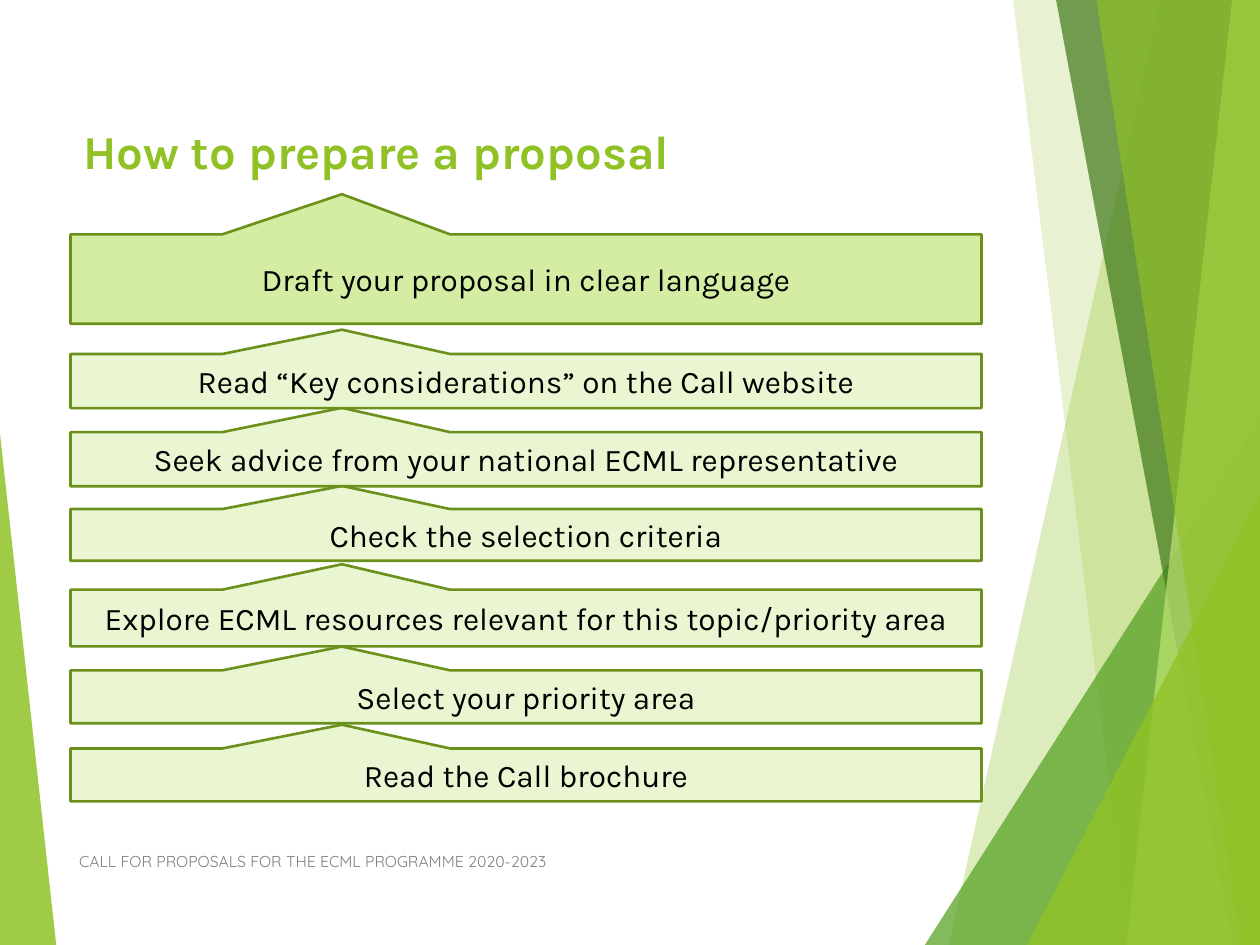
from dataclasses import dataclass

from lxml import etree
from pptx import Presentation
from pptx.dml.color import RGBColor
from pptx.enum.shapes import MSO_SHAPE
from pptx.enum.text import MSO_ANCHOR, MSO_AUTO_SIZE, PP_ALIGN
from pptx.oxml.ns import qn
from pptx.util import Inches, Pt

TRIANGLE = MSO_SHAPE.RIGHT_TRIANGLE
APEX_TRIANGLE = MSO_SHAPE.ISOSCELES_TRIANGLE
CALLOUT = MSO_SHAPE.RECTANGULAR_CALLOUT
LEFT, CENTER = PP_ALIGN.LEFT, PP_ALIGN.CENTER
TOP, MIDDLE = MSO_ANCHOR.TOP, MSO_ANCHOR.MIDDLE
FIT_SHAPE = MSO_AUTO_SIZE.SHAPE_TO_FIT_TEXT


@dataclass(frozen=True)
class Theme:
    """Colours, fonts and type sizes of the slide."""
    accent: str = "90C226"
    leaf: str = "54A021"
    forest: str = "3F7819"
    lime: str = "C0E474"
    step: str = "EAF6D1"
    final_step: str = "D5EDA2"
    outline: str = "6B901C"
    ink: str = "000000"
    muted: str = "808080"
    font: str = "Karla"
    footer_font: str = "Quicksand"
    title_size: int = 27
    step_size: int = 18
    footer_size: int = 9


@dataclass(frozen=True)
class Box:
    """A region in inches."""
    left: float
    top: float
    width: float
    height: float

    def lengths(self):
        """Return the region as slide lengths."""
        return [Inches(v) for v in (self.left, self.top, self.width, self.height)]


THEME = Theme()

STEPS = [
    ("Read the Call brochure", 4.08, 0.42),
    ("Select your priority area", 3.46, 0.42),
    ("Explore ECML resources relevant for this topic/priority area", 2.82, 0.45),
    ("Check the selection criteria", 2.18, 0.41),
    ("Seek advice from your national ECML representative", 1.57, 0.43),
    ("Read “Key considerations” on the Call website", 0.95, 0.43),
    ("Draft your proposal in clear language", 0, 0.71),
]


def paint(shape, color, opacity=100):
    """Fill a shape without outline or shadow at an opacity in percent."""
    shape.shadow.inherit = False
    shape.line.fill.background()
    shape.fill.solid()
    shape.fill.fore_color.rgb = RGBColor.from_string(color)
    if opacity < 100:
        srgb = shape.fill._xPr.find(".//" + qn("a:srgbClr"))
        etree.SubElement(srgb, qn("a:alpha")).set("val", str(opacity * 1000))


def write(paragraph, text, font, size, color, bold=False):
    """Add one formatted run to a paragraph."""
    run = paragraph.add_run()
    run.text = text
    run.font.name = font
    run.font.size = Pt(size)
    run.font.bold = bold
    run.font.color.rgb = RGBColor.from_string(color)


def add_panel(slide, box, top_offset, bottom_offset, color, opacity):
    """Draw a panel with a slanted left edge that reaches the box's right side."""
    right, bottom = box.left + box.width, box.top + box.height
    start = box.left + top_offset
    builder = slide.shapes.build_freeform(Inches(start), Inches(box.top))
    corners = [(right, box.top), (right, bottom), (box.left + bottom_offset, bottom)]
    builder.add_line_segments([(Inches(x), Inches(y)) for x, y in corners])
    paint(builder.convert_to_shape(), color, opacity)


def add_triangle(slide, box, apex, color, opacity):
    """Draw a triangle with its apex at a fraction of its width."""
    triangle = slide.shapes.add_shape(APEX_TRIANGLE, *box.lengths())
    triangle.adjustments[0] = apex
    paint(triangle, color, opacity)


def add_facets(slide, box):
    """Draw the overlapping green facets along the right edge."""
    def corner(width, height):
        return Box(box.left + box.width - width, box.top + box.height - height, width, height)

    add_panel(slide, box, 1.87, 0.19, THEME.accent, 30)
    add_panel(slide, box, 0.7, 1.62, THEME.accent, 20)
    add_triangle(slide, corner(2.66, 4.17), 1, THEME.leaf, 72)
    add_panel(slide, box, 1.04, 2.44, THEME.forest, 70)
    add_panel(slide, box, 2.44, 1.6, THEME.lime, 70)
    add_panel(slide, box, 1.36, 2.51, THEME.accent, 65)
    add_triangle(slide, corner(1.85, 3.57), 1, THEME.accent, 80)


def add_title(slide, box, text):
    """Place the slide title in its placeholder."""
    title = slide.shapes.title
    title.left, title.top, title.width, title.height = box.lengths()
    frame = title.text_frame
    frame.word_wrap = True
    frame.auto_size = MSO_AUTO_SIZE.NONE
    frame.vertical_anchor = TOP
    paragraph = frame.paragraphs[0]
    paragraph.alignment = LEFT
    properties = paragraph._p.get_or_add_pPr()
    properties.set("marL", str(Inches(0.42)))
    properties.set("indent", str(Inches(-0.42)))
    write(paragraph, text, THEME.font, THEME.title_size, THEME.accent, bold=True)


def add_step(slide, box, text, color):
    """Draw one step as a callout that points up to the next."""
    step = slide.shapes.add_shape(CALLOUT, *box.lengths())
    step.adjustments[0], step.adjustments[1] = -0.202, -0.949
    paint(step, color)
    step.line.color.rgb = RGBColor.from_string(THEME.outline)
    step.line.width = Pt(1.5)
    frame = step.text_frame
    frame.word_wrap = True
    frame.vertical_anchor = MIDDLE
    paragraph = frame.paragraphs[0]
    paragraph.alignment = CENTER
    write(paragraph, text, THEME.font, THEME.step_size, THEME.ink)


def add_staircase(slide, box, steps):
    """Stack the steps from the bottom up, the last one highlighted."""
    for text, offset, height in steps:
        color = THEME.final_step if text == steps[-1][0] else THEME.step
        add_step(slide, Box(box.left, box.top + offset, box.width, height), text, color)


def add_footer(slide, box, text):
    """Place the programme line at the foot of the slide."""
    footer = slide.shapes.add_textbox(*box.lengths())
    frame = footer.text_frame
    frame.word_wrap = True
    frame.auto_size = FIT_SHAPE
    write(frame.paragraphs[0], text, THEME.footer_font, THEME.footer_size, THEME.muted)


def main():
    """Build and save the slide."""
    deck = Presentation()
    deck.slide_width, deck.slide_height = Inches(10), Inches(7.5)
    slide = deck.slides.add_slide(deck.slide_layouts[5])
    add_facets(slide, Box(7.34, -0.01, 2.66, 7.51))
    add_triangle(slide, Box(0, 3.44, 0.46, 4.18), 0, THEME.accent, 85)
    add_footer(slide, Box(0.53, 6.71, 4.17, 0.25),
               "CALL FOR PROPOSALS FOR THE ECML PROGRAMME 2020-2023")
    add_title(slide, Box(0.56, 0.92, 7.05, 0.79), "How to prepare a proposal")
    add_staircase(slide, Box(0.56, 1.86, 7.23, 4.5), STEPS)
    deck.save("out.pptx")


if __name__ == "__main__":
    main()
